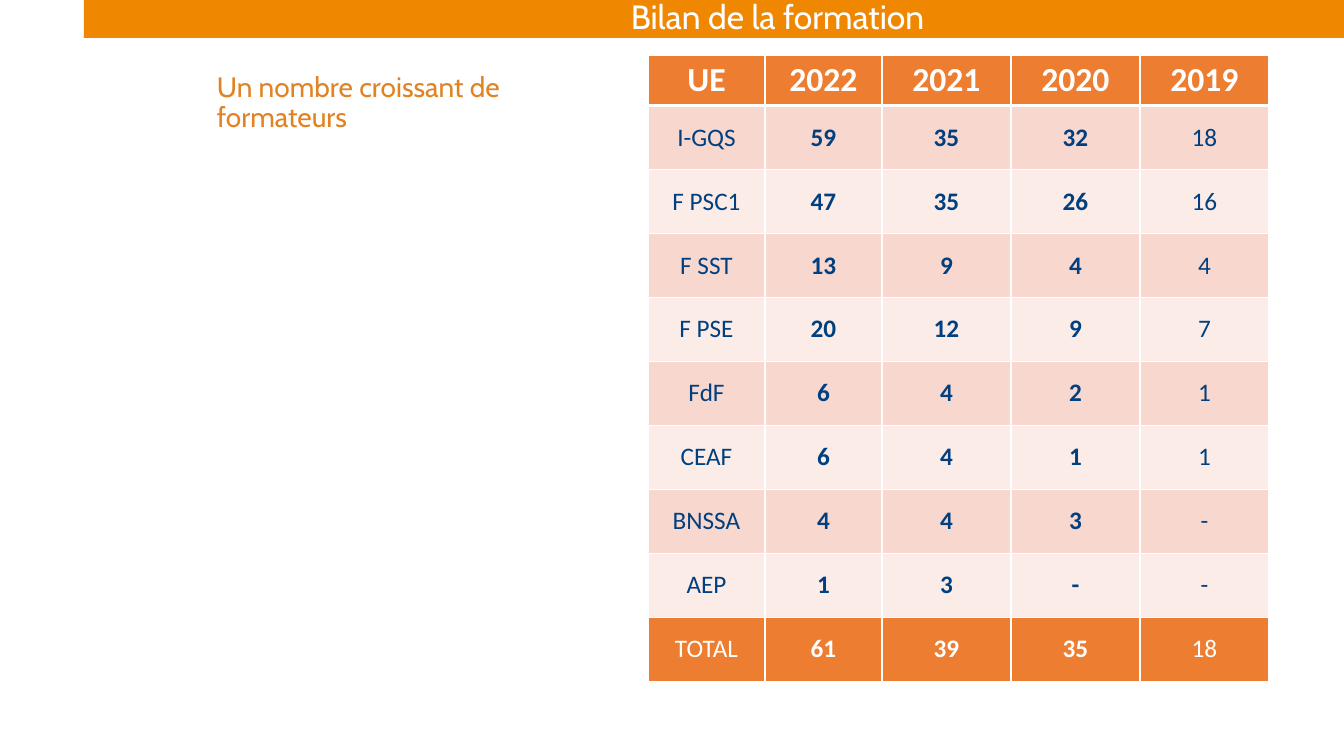
import pptx
import pptx.util
import pptx.dml.color
import pptx.enum.shapes
import pptx.enum.text
import pptx.oxml
import pptx.oxml.ns

PX = 914400 / 100.8
RGB = pptx.dml.color.RGBColor
ALIGN = pptx.enum.text.PP_ALIGN
MIDDLE = pptx.enum.text.MSO_ANCHOR.MIDDLE

WHITE = RGB(0xFF, 0xFF, 0xFF)
AMBER = RGB(0xF0, 0x87, 0x00)
OCHRE = RGB(0xE1, 0x83, 0x23)
ORANGE = RGB(0xED, 0x7D, 0x31)
NAVY = RGB(0x00, 0x40, 0x80)
BANDS = RGB(0xF8, 0xD7, 0xCE), RGB(0xFC, 0xEC, 0xE8)

WIDTHS = 117, 117, 129, 129, 129
HEAD = 50
ROW = 64
ROWS = [
    ("UE", "2022", "2021", "2020", "2019"),
    ("I-GQS", "59", "35", "32", "18"),
    ("F PSC1", "47", "35", "26", "16"),
    ("F SST", "13", "9", "4", "4"),
    ("F PSE", "20", "12", "9", "7"),
    ("FdF", "6", "4", "2", "1"),
    ("CEAF", "6", "4", "1", "1"),
    ("BNSSA", "4", "4", "3", "-"),
    ("AEP", "1", "3", "-", "-"),
    ("TOTAL", "61", "39", "35", "18"),
]


def px(*nums):
    return [pptx.util.Emu(round(num * PX)) for num in nums]


def put_text(frame, text, *, size, color, font="Calibri", bold=False,
             align=ALIGN.CENTER, line=None):
    frame.word_wrap = True
    para = frame.paragraphs[0]
    para.alignment = align
    if line:
        para.line_spacing = line
    run = para.add_run()
    run.text = text
    run.font.name = font
    run.font.size = pptx.util.Pt(size)
    run.font.bold = bold
    run.font.color.rgb = color


def add_bar(slide, box, color):
    bar = slide.shapes.add_shape(pptx.enum.shapes.MSO_SHAPE.RECTANGLE, *px(*box))
    bar.shadow.inherit = False
    bar.fill.solid()
    bar.fill.fore_color.rgb = color
    bar.line.fill.background()


def add_label(slide, box, text, **style):
    frame = slide.shapes.add_textbox(*px(*box)).text_frame
    frame.vertical_anchor = MIDDLE
    put_text(frame, text, font="Cabin", line=0.9, **style)


def set_edges(cell, **widths):
    """Draw white cell borders; widths in points, keyed L, R, T, B."""
    props = cell._tc.get_or_add_tcPr()
    for side, width in widths.items():
        props.append(pptx.oxml.parse_xml(
            f'<a:ln{side} {pptx.oxml.ns.nsdecls("a")} w="{pptx.util.Pt(width)}">'
            f'<a:solidFill><a:srgbClr val="{WHITE}"/></a:solidFill></a:ln{side}>'))


def add_grid(slide, left, top):
    last = len(ROWS) - 1
    box = left, top, sum(WIDTHS), HEAD + ROW * last
    grid = slide.shapes.add_table(len(ROWS), len(WIDTHS), *px(*box)).table
    for col, width in zip(grid.columns, px(*WIDTHS)):
        col.width = width
    for r, row in enumerate(ROWS):
        grid.rows[r].height = px(ROW if r else HEAD)[0]
        strong = r in (0, last)
        for c, text in enumerate(row):
            cell = grid.cell(r, c)
            set_edges(cell, L=1, R=1, T=3 if r == 1 else 1, B=1 if r else 3)
            cell.fill.solid()
            cell.fill.fore_color.rgb = ORANGE if strong else BANDS[(r - 1) % 2]
            cell.vertical_anchor = MIDDLE
            put_text(cell.text_frame, text, size=18 if r else 24,
                     color=WHITE if strong else NAVY,
                     bold=r == 0 or 1 <= c <= 3)


def main():
    deck = pptx.Presentation()
    deck.slide_width, deck.slide_height = px(1344, 756)
    slide = deck.slides.add_slide(deck.slide_layouts[6])
    add_bar(slide, (84, 0, 1260, 38), AMBER)
    add_label(slide, (223, 0, 1109, 38), "Bilan de la formation",
              size=24, color=WHITE)
    add_label(slide, (207, 54, 323, 99), "Un nombre croissant de formateurs",
              size=20, color=OCHRE, align=ALIGN.LEFT)
    add_grid(slide, 648, 55)
    deck.save("out.pptx")


if __name__ == "__main__":
    main()
